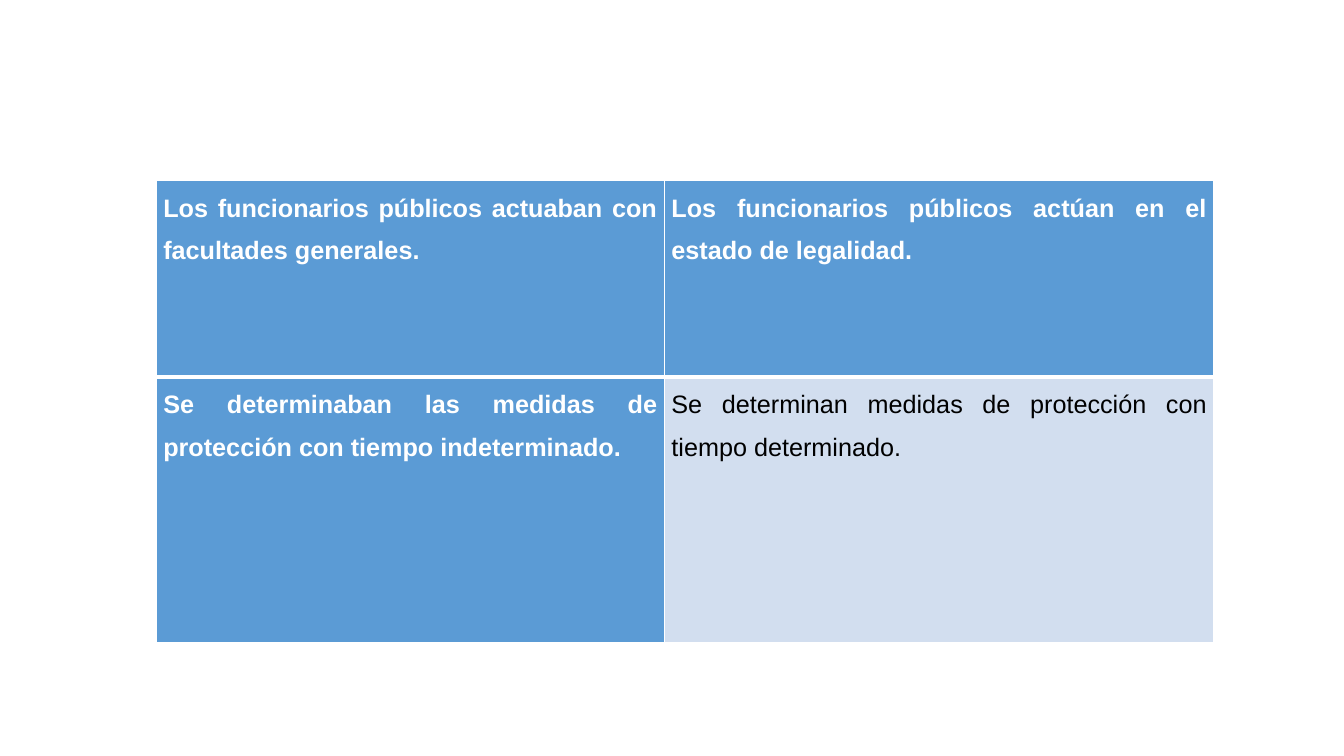
"""Build a slide with a two by two comparison table."""
from dataclasses import dataclass

from lxml.etree import SubElement
from pptx import Presentation
from pptx.dml.color import RGBColor
from pptx.enum.text import PP_ALIGN
from pptx.oxml.ns import qn
from pptx.util import Inches, Pt


@dataclass(frozen=True)
class Theme:
    """Hold the colours and type sizes."""
    font: str = "Arial"
    size: int = 18
    blue: str = "5B9BD5"
    pale: str = "D2DEEF"
    white: str = "FFFFFF"
    black: str = "000000"
    thin: int = 1
    thick: int = 3


class Deck:
    """Draw styled elements on the current slide."""

    def __init__(self, theme, slide):
        """Keep the theme and the slide."""
        self.theme = theme
        self.slide = slide

    def edge(self, cell, side, width):
        """Add one solid border to a cell."""
        props = cell._tc.get_or_add_tcPr()
        line = SubElement(props, qn(f"a:{side}"), w=str(Pt(width)))
        fill = SubElement(line, qn("a:solidFill"))
        SubElement(fill, qn("a:srgbClr"), val=self.theme.white)

    def cell(self, cell, text, strong, top, base):
        """Write and style one cell."""
        theme = self.theme
        cell.margin_left = cell.margin_right = Inches(0.07)
        cell.margin_top = cell.margin_bottom = 0
        for side, width in zip(("lnL", "lnR", "lnT", "lnB"),
                               (theme.thin, theme.thin, top, base)):
            self.edge(cell, side, width)
        cell.fill.solid()
        cell.fill.fore_color.rgb = RGBColor.from_string(
            theme.blue if strong else theme.pale)
        para = cell.text_frame.paragraphs[0]
        para.alignment = PP_ALIGN.JUSTIFY
        para.line_spacing = 1.5
        run = para.add_run()
        run.text = text
        run.font.name = theme.font
        run.font.size = Pt(theme.size)
        run.font.bold = strong
        run.font.color.rgb = RGBColor.from_string(
            theme.white if strong else theme.black)

    def table(self, left, top, cols, rows, texts):
        """Add a table with a strong first row and column."""
        theme = self.theme
        table = self.slide.shapes.add_table(
            len(rows), len(cols), Inches(left), Inches(top),
            Inches(sum(cols)), Inches(sum(rows))).table
        table.first_col = True
        table.horz_banding = True
        for col, width in zip(table.columns, cols):
            col.width = Inches(width)
        for row, height in zip(table.rows, rows):
            row.height = Inches(height)
        for r, line in enumerate(texts):
            for c, text in enumerate(line):
                self.cell(table.cell(r, c), text, r == 0 or c == 0,
                          theme.thick if r == 1 else theme.thin,
                          theme.thick if r == 0 else theme.thin)


def main():
    """Build and save the slide."""
    show = Presentation()
    show.slide_width, show.slide_height = Inches(13.33), Inches(7.5)
    deck = Deck(Theme(), show.slides.add_slide(show.slide_layouts[6]))
    deck.table(1.55, 1.79, (5.04, 5.45), (1.95, 2.63), (
        ("Los funcionarios públicos actuaban con facultades generales.",
         "Los funcionarios públicos actúan en el estado de legalidad."),
        ("Se determinaban las medidas de protección con tiempo indeterminado.",
         "Se determinan medidas de protección con tiempo determinado."),
    ))
    show.save("out.pptx")


if __name__ == "__main__":
    main()
